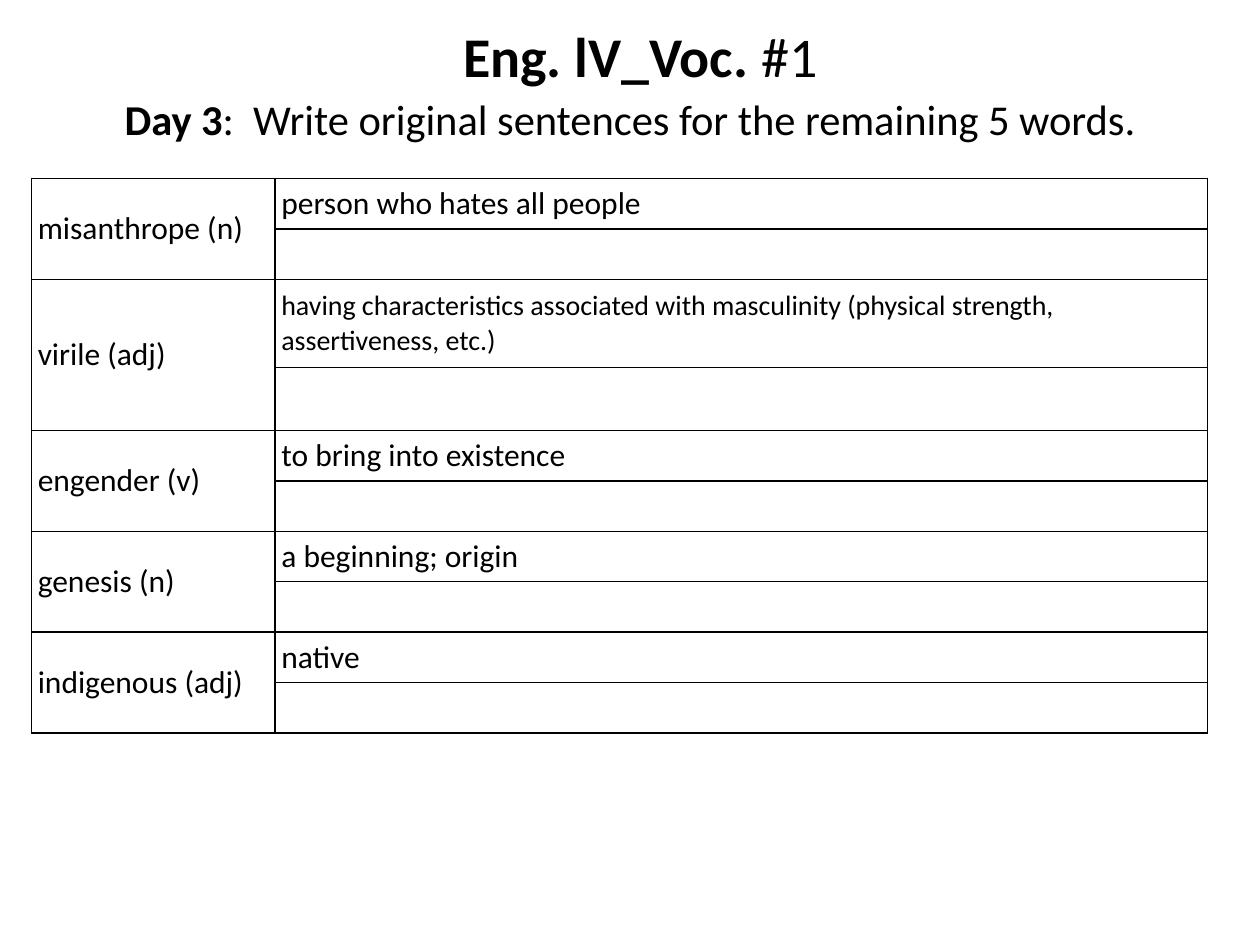
from lxml import etree
from pptx import Presentation
from pptx import util as u
from pptx.dml.color import RGBColor
from pptx.enum import text
from pptx.oxml import ns

BLACK = RGBColor(0, 0, 0)
COLUMNS, ROWS = 120, 90

WORDS = [
    ("misanthrope (n)", "person who hates all people", 18, (4.8, 4.8)),
    ("virile (adj)",
     "having characteristics associated with masculinity "
     "(physical strength, assertiveness, etc.)", 16, (8.4, 6)),
    ("engender (v)", "to bring into existence", 18, (4.8, 4.8)),
    ("genesis (n)", "a beginning; origin", 18, (4.8, 4.8)),
    ("indigenous (adj)", "native", 18, (4.8, 4.8)),
]


def add_text(para, words, size=18, bold=False, color=BLACK, font="Calibri"):
    span = para.add_run()
    span.text = words
    span.font.name = font
    span.font.size = u.Pt(size)
    span.font.bold = bold
    span.font.color.rgb = color


class VocabularyPage:
    def __init__(self, deck):
        self.page = deck.slides.add_slide(deck.slide_layouts[6])
        self.column = deck.slide_width / COLUMNS
        self.row = deck.slide_height / ROWS

    def place(self, left, top, width, height):
        return (round(left * self.column), round(top * self.row),
                round(width * self.column), round(height * self.row))

    def heading(self, area, spans, size, anchor):
        box = self.page.shapes.add_textbox(*self.place(*area))
        frame = box.text_frame
        frame.word_wrap = True
        frame.vertical_anchor = anchor
        frame.margin_top = frame.margin_bottom = 0
        para = frame.paragraphs[0]
        para.alignment = text.PP_ALIGN.CENTER
        for words, bold in spans:
            add_text(para, words, size=size, bold=bold)

    def border(self, cell):
        properties = cell._tc.get_or_add_tcPr()
        for index, side in enumerate(("lnL", "lnR", "lnT", "lnB")):
            line = etree.Element(ns.qn(f"a:{side}"), w=str(u.Pt(1)))
            fill = etree.SubElement(line, ns.qn("a:solidFill"))
            etree.SubElement(fill, ns.qn("a:srgbClr"), val=str(BLACK))
            properties.insert(index, line)

    def cell_style(self, cell):
        cell.fill.background()
        cell.vertical_anchor = text.MSO_ANCHOR.MIDDLE
        cell.margin_left = cell.margin_right = u.Inches(0.05)
        cell.margin_top = cell.margin_bottom = 0
        cell.text_frame.paragraphs[0].font.size = u.Pt(18)
        self.border(cell)

    def word_table(self, left, top, widths, entries):
        heights = [height for entry in entries for height in entry[3]]
        area = self.place(left, top, sum(widths), sum(heights))
        table = self.page.shapes.add_table(len(heights), len(widths), *area).table
        table.first_row = table.horz_banding = False
        for column, width in zip(table.columns, widths):
            column.width = round(width * self.column)
        for row, height in zip(table.rows, heights):
            row.height = round(height * self.row)
        for cell in table.iter_cells():
            self.cell_style(cell)
        for index, (word, meaning, size, _) in enumerate(entries):
            first = 2 * index
            word_cell = table.cell(first, 0)
            word_cell.merge(table.cell(first + 1, 0))
            add_text(word_cell.text_frame.paragraphs[0], word)
            meaning_cell = table.cell(first, 1)
            add_text(meaning_cell.text_frame.paragraphs[0], meaning, size=size)


def main():
    deck = Presentation()
    deck.slide_width, deck.slide_height = u.Inches(10), u.Inches(7.5)
    page = VocabularyPage(deck)
    page.heading((4, 8.9, 112, 10),
                 [("Day 3", True),
                  (":  Write original sentences for the remaining 5 words.", False)],
                 24.3, text.MSO_ANCHOR.TOP)
    page.heading((7, 0, 108, 10.5),
                 [("Eng. lV_Voc. ", True), ("#1", False)],
                 32, text.MSO_ANCHOR.MIDDLE)
    page.word_table(3, 17, (23.2, 88.8), WORDS)
    deck.save("out.pptx")


if __name__ == "__main__":
    main()
